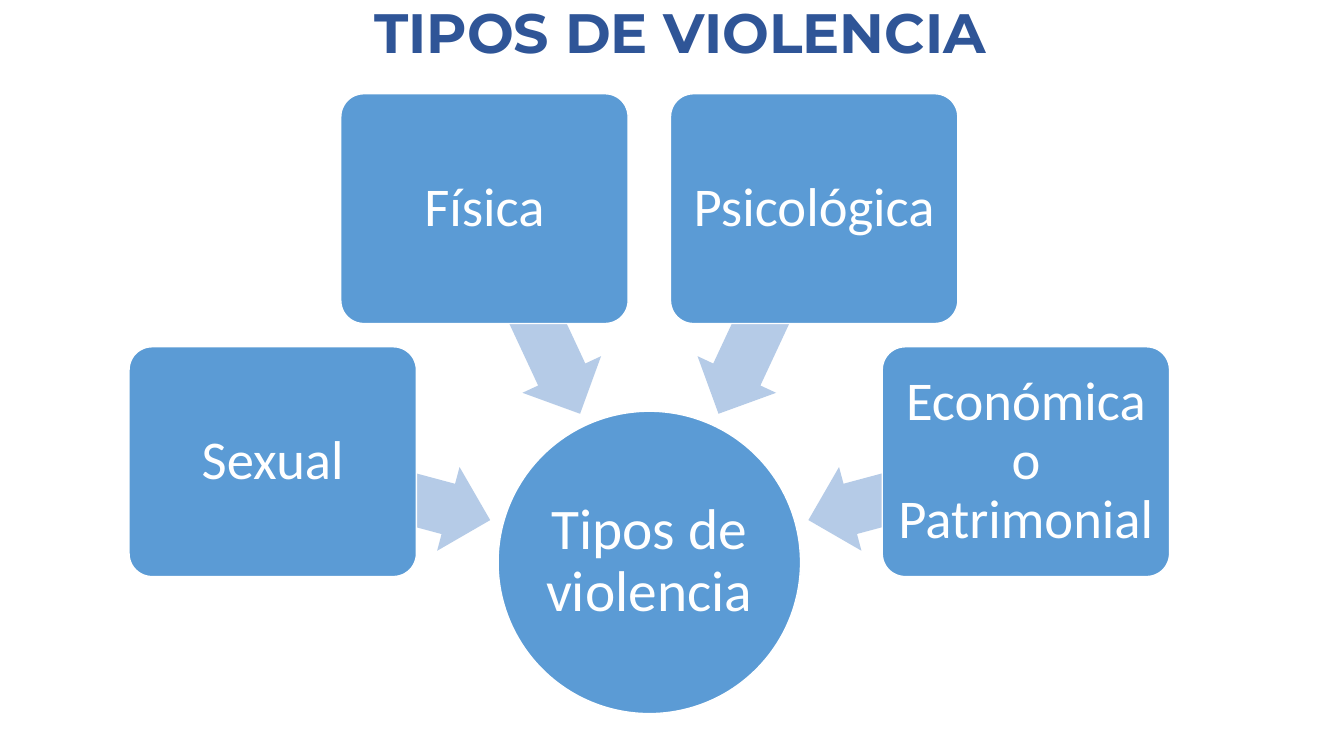
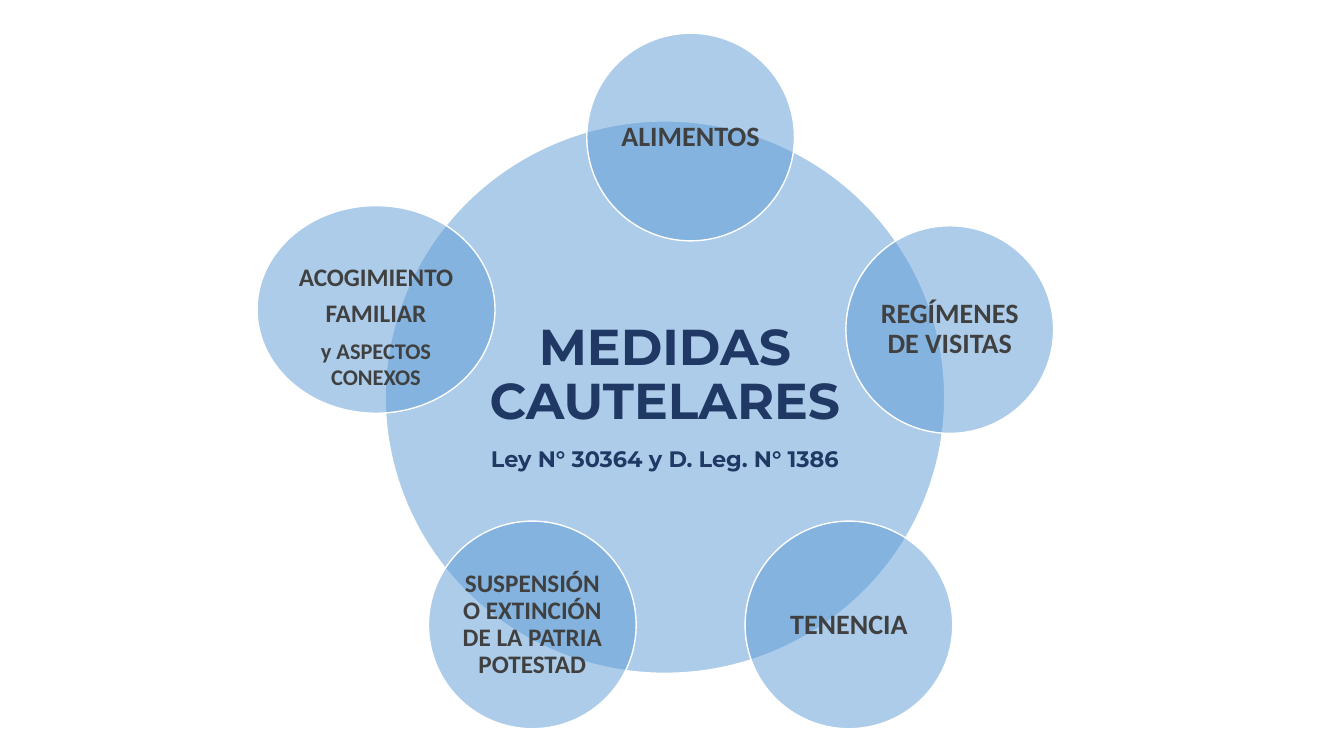
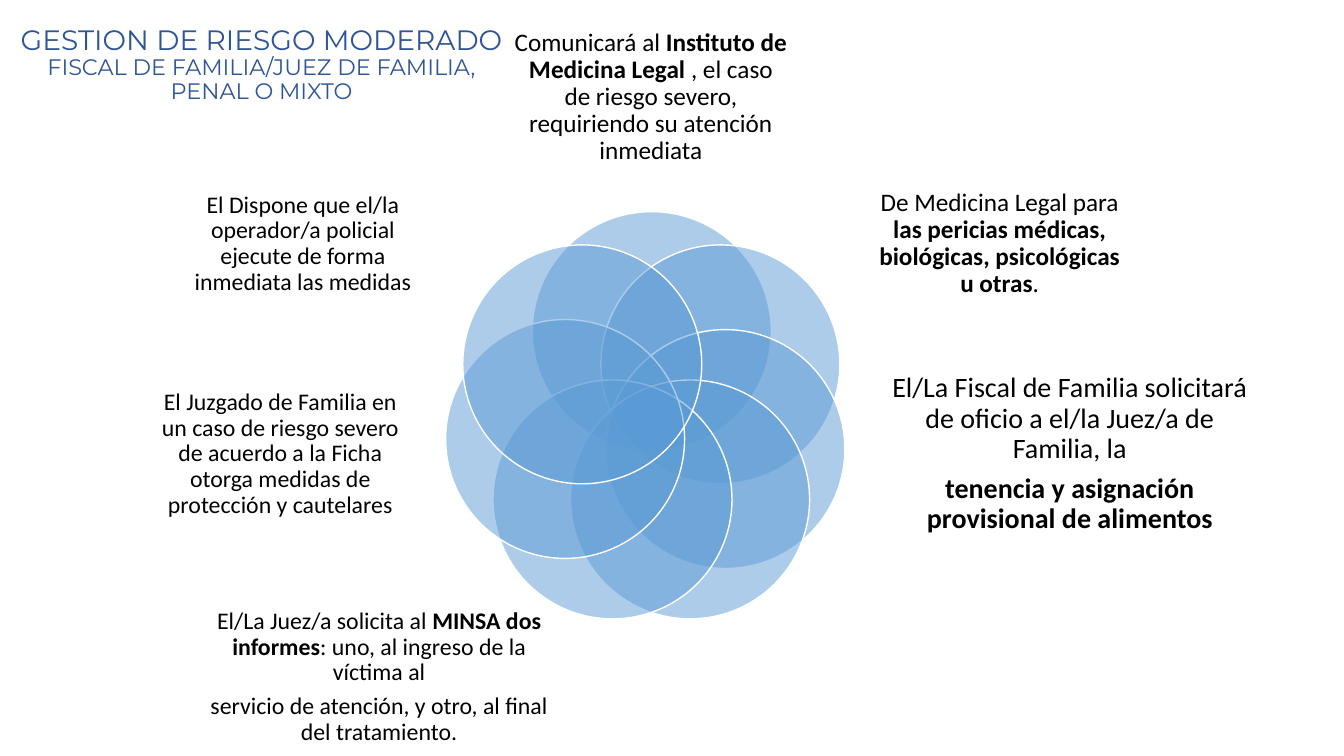
import math
from dataclasses import dataclass

from lxml import etree
from pptx import Presentation
from pptx import util as u
from pptx.dml.color import RGBColor
from pptx.enum import shapes, text
from pptx.oxml.ns import qn

PX = 9144


@dataclass(frozen=True)
class TextStyle:
    """Look of the text in one kind of element."""
    font: str
    color: str
    bold: bool = False
    after: float = 0.35


@dataclass(frozen=True)
class Line:
    """One paragraph, with *bold* parts, and its type size."""
    words: str
    size: float
    spacing: float = 0.9
    bold: bool = False


class Theme:
    """Colours, type sizes and text styles of the deck."""
    blue = "5B9BD5"
    pale = "B5CBE7"
    white = "FFFFFF"
    outline = 1
    title_size, heading, law = 39.6, 36, 16
    hub, box = 41, 39
    large, medium, compact, small = 20, 18, 17, 16
    title = TextStyle("Montserrat", "2F5597", True, 0)
    light_title = TextStyle("Montserrat", "2F5597", False, 0)
    core = TextStyle("Montserrat", "203864", True)
    on_blue = TextStyle("Calibri", "FFFFFF")
    label = TextStyle("Calibri", "404040", True)
    body = TextStyle("Calibri", "000000")


class Deck:
    """Builds slides in one shared style."""

    def __init__(self, theme):
        self.theme = theme
        self.prs = Presentation()
        self.prs.slide_width, self.prs.slide_height = 1333 * PX, 750 * PX
        self.slide = None

    def new_slide(self):
        """Start a blank slide."""
        self.slide = self.prs.slides.add_slide(self.prs.slide_layouts[6])

    def put_text(self, shape, lines, style, inset):
        """Put centred paragraphs into a shape; inset is left, top, right, bottom."""
        frame = shape.text_frame
        frame.word_wrap = True
        frame.auto_size = text.MSO_AUTO_SIZE.NONE
        frame.vertical_anchor = text.MSO_ANCHOR.MIDDLE
        (frame.margin_left, frame.margin_top,
         frame.margin_right, frame.margin_bottom) = (side * PX for side in inset)
        frame.text = "\n".join(line.words for line in lines)
        for paragraph, line in zip(frame.paragraphs, lines):
            paragraph.alignment = text.PP_ALIGN.CENTER
            paragraph.line_spacing = line.spacing
            paragraph.space_after = u.Pt(line.size * style.after)
            parts = line.words.split("*")
            paragraph.runs[0].text = parts[0]
            for part in parts[1:]:
                paragraph.add_run().text = part
            for index, run in enumerate(paragraph.runs):
                run.font.name = style.font
                run.font.size = u.Pt(line.size)
                run.font.bold = style.bold or line.bold or index % 2 == 1
                run.font.color.rgb = RGBColor.from_string(style.color)

    def text_box(self, left, top, width, height, lines, style, inset=(0, 0, 0, 0)):
        """Add free text."""
        box = self.slide.shapes.add_textbox(left * PX, top * PX, width * PX, height * PX)
        self.put_text(box, lines, style, inset)

    def title(self, left, top, width, height, lines, style):
        """Add the slide title."""
        self.text_box(left, top, width, height, lines, style, (10, 5, 10, 5))

    def centred(self, kind, center, size, color):
        """Add a filled preset shape around a centre."""
        (x, y), (width, height) = center, size
        left, top = round(x - width / 2), round(y - height / 2)
        shape = self.slide.shapes.add_shape(
            kind, left * PX, top * PX, width * PX, height * PX)
        shape.shadow.inherit = False
        shape.fill.solid()
        shape.fill.fore_color.rgb = RGBColor.from_string(color)
        shape.line.fill.background()
        return shape

    def outline(self, shape):
        """Draw the white edge."""
        shape.line.color.rgb = RGBColor.from_string(self.theme.white)
        shape.line.width = u.Pt(self.theme.outline)

    def circle(self, center, size, lines=(), style=None, inset=(3, 3, 3, 3), alpha=100):
        """Add an ellipse, see-through when alpha is below 100."""
        ellipse = self.centred(shapes.MSO_SHAPE.OVAL, center, size, self.theme.blue)
        if alpha < 100:
            fill_color = next(ellipse._element.spPr.iter(qn("a:srgbClr")))
            etree.SubElement(fill_color, qn("a:alpha")).set("val", str(alpha * 1000))
        self.outline(ellipse)
        if lines:
            self.put_text(ellipse, lines, style, inset)

    def card(self, center, size, lines):
        """Add a rounded box with white text."""
        card = self.centred(
            shapes.MSO_SHAPE.ROUNDED_RECTANGLE, center, size, self.theme.blue)
        card.adjustments[0] = 0.1
        self.outline(card)
        self.put_text(card, lines, self.theme.on_blue, (8, 8, 8, 8))

    def arrow(self, center, size, angle):
        """Add a block arrow turned by an angle."""
        arrow = self.centred(shapes.MSO_SHAPE.LEFT_ARROW, center, size, self.theme.pale)
        arrow.adjustments[0], arrow.adjustments[1] = 0.6, 0.5
        arrow.rotation = angle


def around(center, radius, angle):
    """Return the point at an angle, clockwise from the right."""
    turn = math.radians(angle)
    return center[0] + radius * math.cos(turn), center[1] + radius * math.sin(turn)


def violence_types(deck):
    """Four types of violence pointing at the hub."""
    theme = deck.theme
    deck.new_slide()
    deck.title(30, 0, 1289, 70, [Line("TIPOS DE VIOLENCIA", theme.title_size)], theme.title)
    hub = (644, 558)
    deck.circle(hub, (300, 300), [Line("Tipos de violencia", theme.hub)], theme.on_blue)
    kinds = ["Sexual", "Física", "Psicológica", "Económica o Patrimonial"]
    for index, kind in enumerate(kinds):
        angle = 195 + 50 * index
        deck.arrow(around(hub, 275, angle), (224, 86), angle)
        deck.card(around(hub, 387, angle), (285, 228), [Line(kind, theme.box)])


def precautionary_measures(deck):
    """Five measures around the law."""
    theme = deck.theme
    deck.new_slide()
    law = [Line("MEDIDAS CAUTELARES", theme.heading),
           Line("Ley N° 30364 y D. Leg. N° 1386", theme.law)]
    deck.circle((660, 394), (555, 548), law, theme.core, (5, 5, 5, 5), 50)
    measures = [
        ((685, 136), "ALIMENTOS", theme.large),
        ((942, 327), "REGÍMENES DE VISITAS", theme.large),
        ((842, 620), "TENENCIA", theme.large),
        ((528, 620), "SUSPENSIÓN O EXTINCIÓN DE LA PATRIA POTESTAD", theme.medium),
    ]
    for center, measure, size in measures:
        deck.circle(center, (206, 206), [Line(measure, size)], theme.label, alpha=50)
    foster_care = [Line("ACOGIMIENTO", theme.medium), Line("FAMILIAR", theme.medium),
                   Line("y ASPECTOS CONEXOS", theme.small, 1.0)]
    deck.circle((373, 307), (236, 206), foster_care, theme.label, (3, 39, 3, 3), 50)


def moderate_risk(deck):
    """Seven overlapping circles with the steps around them."""
    theme = deck.theme
    deck.new_slide()
    nudges = {2: (-12, 10)}
    for index in range(7):
        x, y = around((646, 416), 88, -90 + index * 360 / 7)
        dx, dy = nudges.get(index, (0, 0))
        deck.circle((x + dx, y + dy), (237, 237), alpha=50)
    steps = [
        ((510, 24, 271, 145),
         [Line("Comunicará al *Instituto de Medicina Legal* , el caso de riesgo severo, "
               "requiriendo su atención inmediata", theme.medium)]),
        ((863, 162, 257, 160),
         [Line("De Medicina Legal para *las pericias médicas, biológicas, psicológicas "
               "u otras*.", theme.medium)]),
        ((882, 375, 358, 151),
         [Line("El/La Fiscal de Familia solicitará de oficio a el/la Juez/a de "
               "Familia, la", theme.large),
          Line("tenencia y asignación provisional de alimentos", theme.large, bold=True)]),
        ((197, 594, 358, 156),
         [Line("El/La Juez/a solicita al *MINSA dos informes*: uno, al ingreso de la "
               "víctima al", theme.compact),
          Line("servicio de atención, y otro, al final del tratamiento.", theme.compact)]),
        ((152, 365, 252, 171),
         [Line("El Juzgado de Familia en un caso de riesgo severo de acuerdo a la Ficha "
               "otorga medidas de protección y cautelares", theme.compact)]),
        ((172, 162, 257, 160),
         [Line("El Dispone que el/la operador/a policial ejecute de forma inmediata "
               "las medidas", theme.compact)]),
    ]
    for area, lines in steps:
        deck.text_box(*area, lines, theme.body)
    deck.title(0, 0, 519, 130,
               [Line("GESTION DE RIESGO MODERADO", theme.large),
                Line("FISCAL DE FAMILIA/JUEZ DE FAMILIA, PENAL O MIXTO", theme.small)],
               theme.light_title)


def main():
    """Build and save the deck."""
    deck = Deck(Theme())
    for build in (violence_types, precautionary_measures, moderate_risk):
        build(deck)
    deck.prs.save("out.pptx")


if __name__ == "__main__":
    main()
